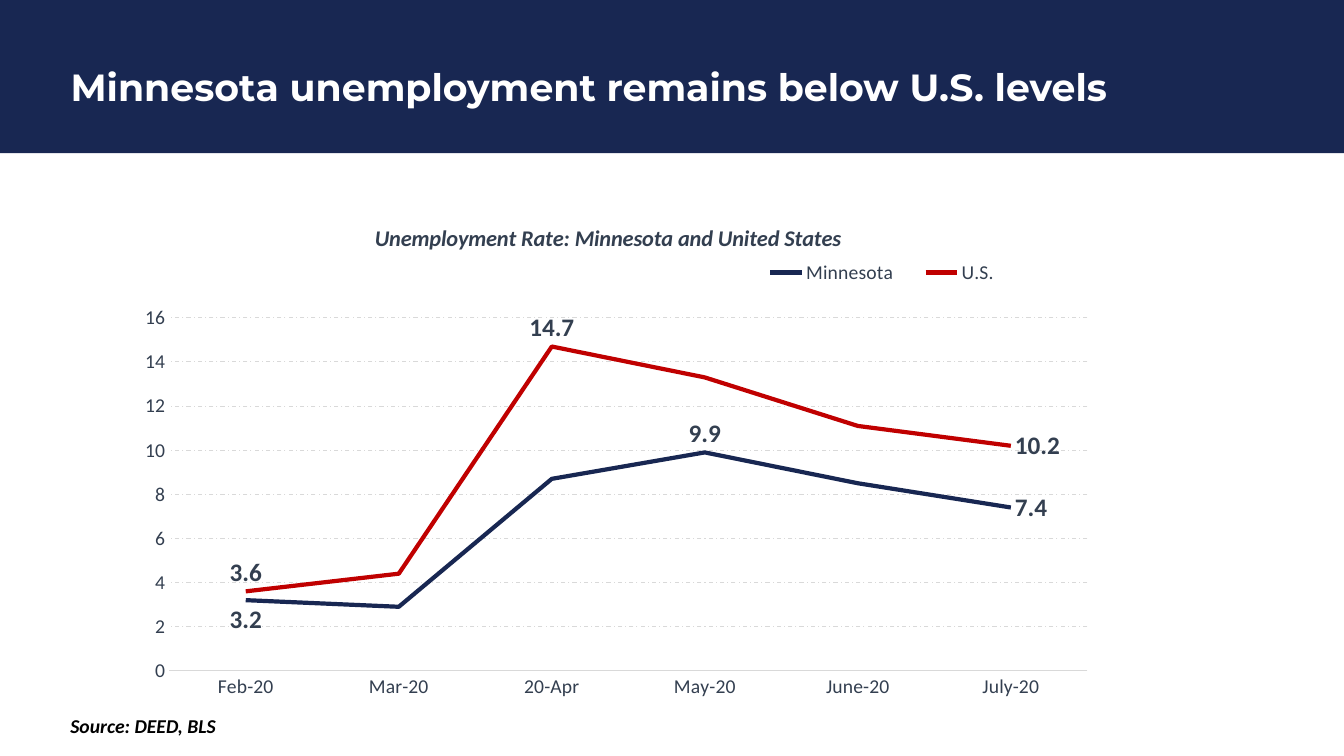
from dataclasses import dataclass

from lxml import etree
from pptx import Presentation
from pptx.chart.data import CategoryChartData
from pptx.dml.color import RGBColor
from pptx.enum.chart import XL_CHART_TYPE, XL_LABEL_POSITION, XL_LEGEND_POSITION, XL_TICK_MARK
from pptx.enum.dml import MSO_LINE
from pptx.enum.shapes import MSO_SHAPE
from pptx.enum.text import MSO_ANCHOR, PP_ALIGN
from pptx.oxml.ns import qn
from pptx.util import Inches, Pt

ABOVE = XL_LABEL_POSITION.ABOVE
BELOW = XL_LABEL_POSITION.BELOW
RIGHT = XL_LABEL_POSITION.RIGHT
NO_TICKS = XL_TICK_MARK.NONE

TITLE = "Minnesota unemployment remains below U.S. levels"
SOURCE = "Source: DEED, BLS"
CHART_TITLE = "Unemployment Rate: Minnesota and United States"
MONTHS = ["Feb-20", "Mar-20", "20-Apr", "May-20", "June-20", "July-20"]
RATES = {
    "Minnesota": [3.2, 2.9, 8.7, 9.9, 8.5, 7.4],
    "U.S.": [3.6, 4.4, 14.7, 13.3, 11.1, 10.2],
}
LABELS = {
    "Minnesota": {0: BELOW, 3: ABOVE, 5: RIGHT},
    "U.S.": {0: ABOVE, 2: ABOVE, 5: RIGHT},
}


@dataclass(frozen=True)
class Theme:
    navy: RGBColor = RGBColor(0x18, 0x27, 0x52)
    red: RGBColor = RGBColor(0xC0, 0x00, 0x00)
    slate: RGBColor = RGBColor(0x33, 0x3F, 0x50)
    grid: RGBColor = RGBColor(0xD9, 0xD9, 0xD9)
    white: RGBColor = RGBColor(0xFF, 0xFF, 0xFF)
    black: RGBColor = RGBColor(0x00, 0x00, 0x00)
    heading: str = "Montserrat"
    body: str = "Calibri"
    title_size: int = 27
    chart_title_size: int = 16
    label_size: int = 18
    text_size: int = 14


THEME = Theme()
LINE_COLORS = {"Minnesota": THEME.navy, "U.S.": THEME.red}


def set_font(font, size, color, name=THEME.body, bold=False, italic=False):
    font.size, font.name = Pt(size), name
    font.bold, font.italic = bold, italic
    font.color.rgb = color


def place(element, index, x, y, w=None, h=None, inner=False):
    """Give a chart part a manual layout, in fractions of the chart."""
    for old in element.findall(qn("c:layout")):
        element.remove(old)
    layout = etree.Element(qn("c:layout"))
    manual = etree.SubElement(layout, qn("c:manualLayout"))
    settings = [("xMode", "edge"), ("yMode", "edge"), ("x", x), ("y", y), ("w", w), ("h", h)]
    if inner:
        settings.insert(0, ("layoutTarget", "inner"))
    for tag, value in settings:
        if value is not None:
            etree.SubElement(manual, qn(f"c:{tag}")).set("val", str(value))
    element.insert(index, layout)


def add_heading(s, width):
    band = s.shapes.add_shape(MSO_SHAPE.RECTANGLE, 0, 0, width, Inches(1.52))
    band.shadow.inherit = False
    band.fill.solid()
    band.fill.fore_color.rgb = THEME.navy
    band.line.fill.background()

    title = s.shapes.title
    title.left, title.top = Inches(0.6), Inches(0.32)
    title.width, title.height = Inches(12.11), Inches(1.14)
    s.shapes.element.append(title.element)  # bring the title in front of the band
    tf = title.text_frame
    tf.text = TITLE
    tf.vertical_anchor = MSO_ANCHOR.MIDDLE
    p = tf.paragraphs[0]
    p.alignment = PP_ALIGN.LEFT
    p.line_spacing = 0.9
    set_font(p.font, THEME.title_size, THEME.white, THEME.heading, bold=True)


def add_source(s):
    tf = s.shapes.add_textbox(Inches(0.6), Inches(7.03), Inches(4.83), Inches(0.34)).text_frame
    tf.word_wrap = True
    tf.text = SOURCE
    set_font(tf.paragraphs[0].font, THEME.text_size, THEME.black, bold=True, italic=True)


def format_axes(chart):
    months, rates = chart.category_axis, chart.value_axis
    for axis in (months, rates):
        axis.major_tick_mark = axis.minor_tick_mark = NO_TICKS
        set_font(axis.tick_labels.font, THEME.text_size, THEME.slate)
    months.format.line.color.rgb = THEME.grid
    months.format.line.width = Pt(0.75)
    rates.minimum_scale, rates.maximum_scale, rates.major_unit = 0, 16, 2
    rates.format.line.fill.background()
    rates.has_major_gridlines = True
    grid = rates.major_gridlines.format.line
    grid.color.rgb = THEME.grid
    grid.width = Pt(0.75)
    grid.dash_style = MSO_LINE.DASH_DOT


def format_series(series):
    series.smooth = False
    series.format.line.color.rgb = LINE_COLORS[series.name]
    series.format.line.width = Pt(3)
    series.data_labels.show_value = False
    for index, position in LABELS[series.name].items():
        label = series.points[index].data_label
        set_font(label.font, THEME.label_size, THEME.slate, bold=True)
        label.position = position


def add_rate_chart(s):
    data = CategoryChartData()
    data.categories = MONTHS
    for name, values in RATES.items():
        data.add_series(name, values)
    chart = s.shapes.add_chart(XL_CHART_TYPE.LINE, Inches(1.24), Inches(1.97),
                               Inches(9.75), Inches(5.06), data).chart
    set_font(chart.font, THEME.text_size, THEME.slate)

    chart.has_title = True
    title = chart.chart_title
    title.text_frame.text = CHART_TITLE
    set_font(title.text_frame.paragraphs[0].font, THEME.chart_title_size, THEME.slate,
             bold=True, italic=True)
    title.include_in_layout = False

    chart.has_legend = True
    legend = chart.legend
    legend.position = XL_LEGEND_POSITION.TOP
    legend.include_in_layout = False
    set_font(legend.font, THEME.text_size, THEME.slate)

    format_axes(chart)
    chart.plots[0].vary_by_categories = False
    for series in chart.plots[0].series:
        format_series(series)

    root = chart.element
    place(root.find(".//" + qn("c:title")), 1, 0.25, 0.04)
    place(root.find(".//" + qn("c:legend")), 1, 0.63, 0.11, 0.28, 0.07)
    place(root.find(".//" + qn("c:plotArea")), 0, 0.045, 0.234, 0.934, 0.692, inner=True)


def main():
    prs = Presentation()
    prs.slide_width, prs.slide_height = Inches(13.33), Inches(7.5)
    s = prs.slides.add_slide(prs.slide_layouts[5])
    add_heading(s, prs.slide_width)
    add_source(s)
    add_rate_chart(s)
    prs.save("out.pptx")


if __name__ == "__main__":
    main()
